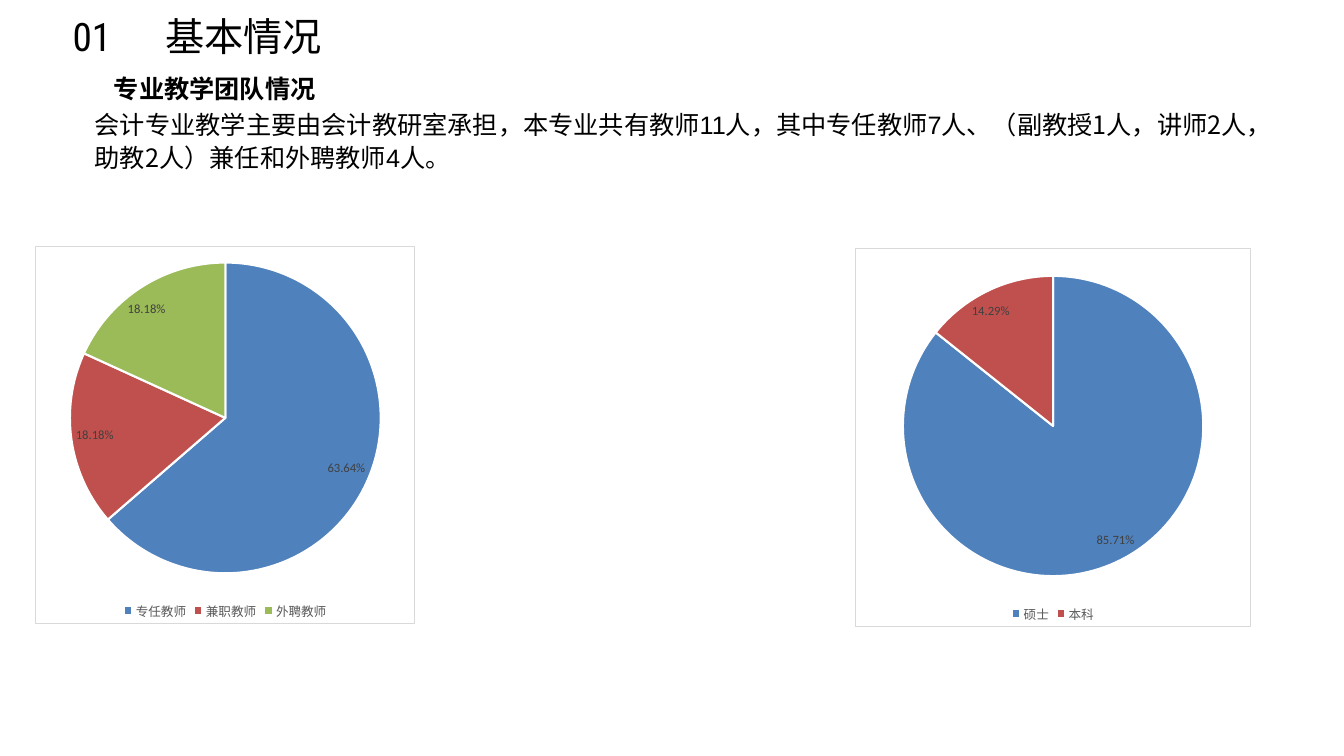
from lxml import etree
from pptx import Presentation
from pptx.chart.data import CategoryChartData
from pptx.dml.color import RGBColor
from pptx.enum.chart import XL_CHART_TYPE, XL_LABEL_POSITION, XL_LEGEND_POSITION
from pptx.enum.text import MSO_AUTO_SIZE
from pptx.oxml import parse_xml
from pptx.oxml.ns import qn
from pptx.util import Inches, Pt

PIE = XL_CHART_TYPE.PIE
BEST_FIT = XL_LABEL_POSITION.BEST_FIT
BOTTOM = XL_LEGEND_POSITION.BOTTOM
GROW = MSO_AUTO_SIZE.SHAPE_TO_FIT_TEXT
CJK, LATIN, NUMERAL, CHART = "Noto Sans CJK SC", "Arial", "Roboto Condensed", "Calibri"
SLICES = ["4F81BD", "C0504D", "9BBB59"]
NS = ('xmlns:c="http://schemas.openxmlformats.org/drawingml/2006/chart" '
      'xmlns:a="http://schemas.openxmlformats.org/drawingml/2006/main"')


def rgb(value):
    """Turn a hex string into a colour."""
    return RGBColor.from_string(value)


def set_font(font, size, color, name):
    """Set size, colour and typeface of a font."""
    font.size, font.name = Pt(size), name
    font.color.rgb = rgb(color)


def add_text(s, box, *runs, size=18, spacing=23.8, bold=None):
    """Add a text box from (text, font) runs."""
    tf = s.shapes.add_textbox(*map(Inches, box)).text_frame
    tf.margin_left = tf.margin_top = tf.margin_right = tf.margin_bottom = 0
    tf.word_wrap = True
    tf.auto_size = GROW
    p = tf.paragraphs[0]
    p.line_spacing = Pt(spacing)
    for text, name in runs:
        r = p.add_run()
        r.text = text
        r.font.bold = bold
        set_font(r.font, size, "000000", name)
        etree.SubElement(r.font._element, qn("a:ea"), typeface=name)


def add_frame(chart):
    """Give the chart square corners, a white fill and a thin grey border."""
    c = chart._chartSpace.find(qn("c:chart"))
    c.addprevious(parse_xml(f'<c:roundedCorners {NS} val="0"/>'))
    c.addnext(parse_xml(
        f'<c:spPr {NS}><a:solidFill><a:srgbClr val="FFFFFF"/></a:solidFill>'
        '<a:ln w="9525"><a:solidFill><a:srgbClr val="D9D9D9"/></a:solidFill></a:ln></c:spPr>'))


def place_plot(chart, area):
    """Place the plot by fractions of the chart box."""
    plot_area = chart._chartSpace.find(qn("c:chart")).find(qn("c:plotArea"))
    for layout in plot_area.findall(qn("c:layout")):
        plot_area.remove(layout)
    sizes = "".join(f'<c:{k} val="{v}"/>' for k, v in zip("xywh", area))
    plot_area.insert(0, parse_xml(
        f'<c:layout {NS}><c:manualLayout><c:layoutTarget val="inner"/>'
        f'<c:xMode val="edge"/><c:yMode val="edge"/>{sizes}</c:manualLayout></c:layout>'))


def add_pie(s, box, shares, area):
    """Add a framed pie chart of shares with a legend below."""
    data = CategoryChartData(number_format="0.00%")
    data.categories = list(shares)
    data.add_series("Series 1", list(shares.values()))
    chart = s.shapes.add_chart(PIE, *map(Inches, box), data).chart
    set_font(chart.font, 10, "000000", CHART)
    chart.has_title = False
    chart.has_legend = True
    chart.legend.position = BOTTOM
    chart.legend.include_in_layout = False
    set_font(chart.legend.font, 9, "595959", CHART)
    plot = chart.plots[0]
    plot.vary_by_categories = True
    for i, color in enumerate(SLICES[:len(shares)]):
        fmt = plot.series[0].points[i].format
        fmt.fill.solid()
        fmt.fill.fore_color.rgb = rgb(color)
        fmt.line.color.rgb = rgb("FFFFFF")
        fmt.line.width = Pt(1.5)
    labels = plot.series[0].data_labels
    labels.show_value = True
    labels.number_format = "0.00%"
    labels.number_format_is_linked = False
    labels.position = BEST_FIT
    set_font(labels.font, 9, "404040", CHART)
    add_frame(chart)
    place_plot(chart, area)


def add_heading(s, x, y):
    """Add the section number, title and subtitle."""
    add_text(s, (x, y, 0.83, 1.02), ("01", NUMERAL), size=28, spacing=31.4)
    add_text(s, (x + 0.92, y + 0.05, 2.14, 0.97), ("基本情况", CJK), size=28, spacing=27.9)
    add_text(s, (x + 0.41, y + 0.55, 2.38, 0.71), ("专业教学团队情况", CJK), bold=True)


def main():
    """Build and save the slide."""
    prs = Presentation()
    prs.slide_width, prs.slide_height = Inches(13.33), Inches(7.5)
    s = prs.slides.add_slide(prs.slide_layouts[6])
    add_heading(s, 0.72, 0.15)
    add_text(s, (0.94, 1.05, 11.69, 0.67),
             ("会计专业教学主要由会计教研室承担，本专业共有教师", CJK), ("11", LATIN),
             ("人，其中专任教师", CJK), ("7", LATIN),
             ("人、（副教授1人，讲师2人，助教2人）兼任和外聘教师", CJK), ("4", LATIN),
             ("人。", CJK))
    add_pie(s, (8.48, 2.46, 3.93, 3.76), {"硕士": 0.8571, "本科": 0.1429},
            (0.12, 0.07, 0.76, 0.8))
    add_pie(s, (0.35, 2.44, 3.77, 3.75),
            {"专任教师": 0.6364, "兼职教师": 0.1818, "外聘教师": 0.1818},
            (0.09, 0.04, 0.82, 0.83))
    prs.save("out.pptx")


if __name__ == "__main__":
    main()
